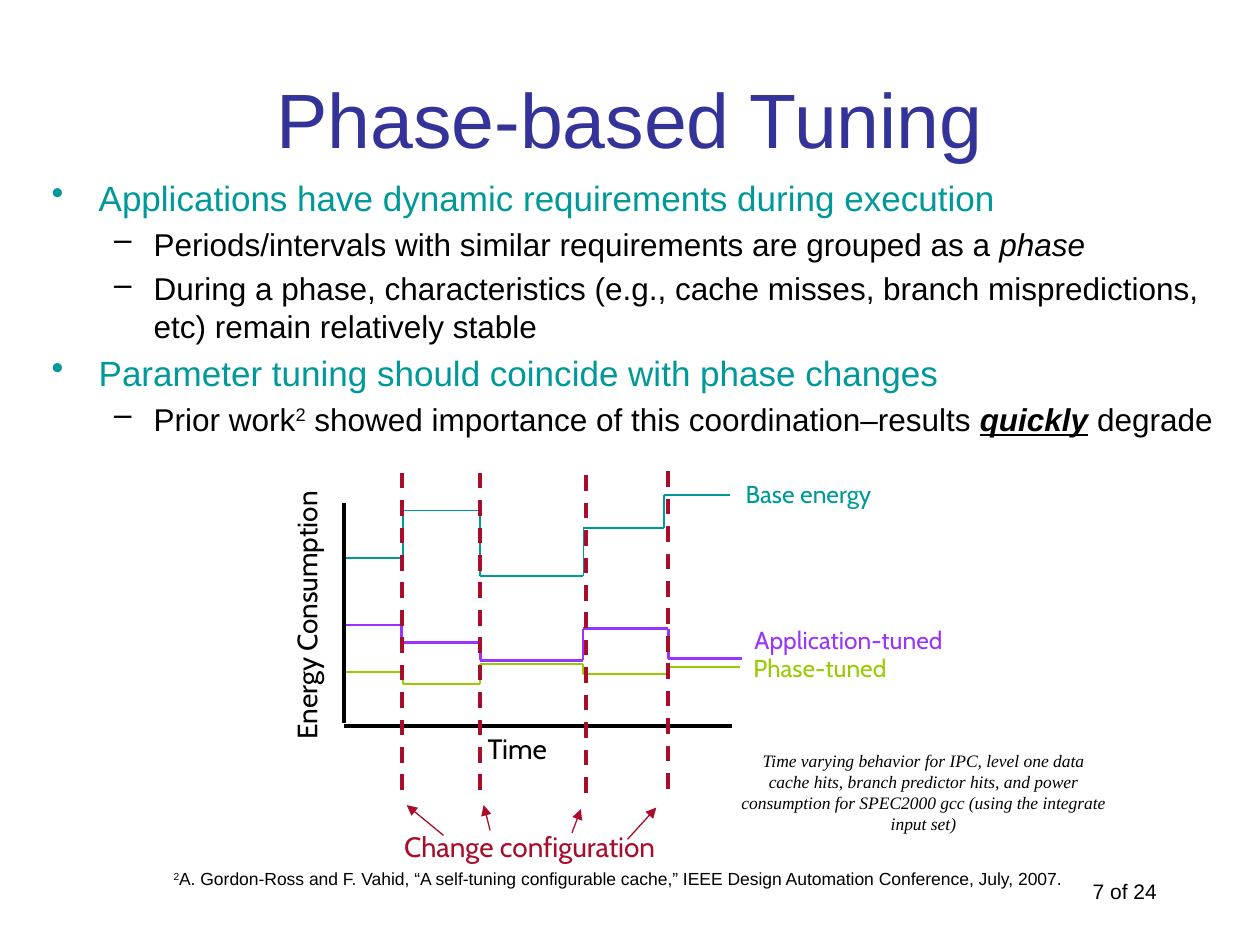
from dataclasses import dataclass
from itertools import pairwise

from lxml import etree
from pptx import Presentation
from pptx import util as u
from pptx.dml import color as dml
from pptx.enum import dml as line_styles, shapes, text
from pptx.oxml import ns


@dataclass(frozen=True)
class Theme:
    title: str = "333399"
    teal: str = "009999"
    purple: str = "9933FF"
    green: str = "99CC00"
    red: str = "A90D2B"
    black: str = "000000"
    sans: str = "Arial"
    serif: str = "Times New Roman"
    chart: str = "Cabin"
    title_size: int = 44
    point_size: int = 20
    detail_size: int = 18
    axis_size: int = 16
    label_size: int = 14
    page_size: int = 12
    note_size: int = 10


@dataclass(frozen=True)
class Box:
    left: float
    top: float
    width: float
    height: float


@dataclass(frozen=True)
class Trace:
    """Energy per phase: one level between each pair of phase edges."""
    label: str
    color: str
    weight: float
    edges: tuple
    levels: tuple
    label_box: Box


@dataclass(frozen=True)
class BulletStyle:
    mark: str
    level: int
    color: str
    size: int
    margin: float
    hang: float


THEME = Theme()
POINT = BulletStyle("•", 0, THEME.teal, THEME.point_size, 0.95, 0.95)
DETAIL = BulletStyle("–", 1, THEME.black, THEME.detail_size, 2.06, 0.8)

# A run is plain text or a (text, format) pair
BULLETS = [
    (POINT, ["Applications have dynamic requirements during execution"]),
    (DETAIL, ["Periods/intervals with similar requirements are grouped as a ",
              ("phase", {"italic": True})]),
    (DETAIL, ["During a phase, characteristics (e.g., cache misses, branch "
              "mispredictions, etc) remain relatively stable"]),
    (POINT, ["Parameter tuning should coincide with phase changes"]),
    (DETAIL, ["Prior work", ("2", {"raised": True}),
              " showed importance of this coordination–results ",
              ("quickly", {"bold": True, "italic": True, "underline": True}),
              " degrade"]),
]

TRACES = [
    Trace("Base energy", THEME.teal, 1,
          (6.96, 8.13, 9.68, 11.76, 13.39, 14.71),
          (11.25, 10.29, 11.61, 10.64, 9.98), Box(14.78, 9.53, 3.23, 0.86)),
    Trace("Application-tuned", THEME.purple, 1.5,
          (6.96, 8.1, 9.68, 11.75, 13.47, 14.96),
          (12.6, 12.95, 13.31, 12.67, 13.28), Box(14.96, 12.47, 4.32, 0.84)),
    Trace("Phase-tuned", THEME.green, 1,
          (6.98, 8.13, 9.68, 11.75, 13.44, 14.91),
          (13.54, 13.79, 13.39, 13.59, 13.44), Box(14.94, 13.03, 3.23, 0.84)),
]

# Tops of the phase-change markers, and arrows from the caption to them
MARKER_TOPS = [(8.1, 9.53), (9.68, 9.53), (11.81, 9.58), (13.46, 9.5)]
MARKER_HEIGHT = 6.47
CHANGE_ARROWS = [((8.94, 16.84), (8.2, 16.23)), ((9.88, 16.74), (9.75, 16.23)),
                 ((11.53, 16.79), (11.71, 16.31)), ((12.65, 16.92), (13.23, 16.28))]


def add_run(paragraph, words: str, *, size: float, color: str = THEME.black,
            font: str = THEME.sans, bold: bool = False, italic: bool = False,
            underline: bool = False, raised: bool = False) -> None:
    run = paragraph.add_run()
    run.text = words
    run.font.size, run.font.name = u.Pt(size), font
    run.font.bold, run.font.italic, run.font.underline = bold, italic, underline
    run.font.color.rgb = dml.RGBColor.from_string(color)
    if raised:
        run._r.get_or_add_rPr().set("baseline", "30000")


def add_runs(paragraph, runs: list, **style) -> None:
    for run in runs:
        words, extra = (run, {}) if isinstance(run, str) else run
        add_run(paragraph, words, **{**style, **extra})


def place(shape, box: Box) -> None:
    shape.left, shape.top = u.Cm(box.left), u.Cm(box.top)
    shape.width, shape.height = u.Cm(box.width), u.Cm(box.height)


def add_box(slide, box: Box, wrap: bool = True):
    shape = slide.shapes.add_textbox(0, 0, 0, 0)
    place(shape, box)
    shape.text_frame.word_wrap = wrap
    return shape


def add_label(slide, box: Box, runs: list, *, centered: bool = False,
              rotation: float = 0, **style) -> None:
    shape = add_box(slide, box, wrap=centered)
    shape.rotation = rotation
    paragraph = shape.text_frame.paragraphs[0]
    if centered:
        paragraph.alignment = text.PP_ALIGN.CENTER
    add_runs(paragraph, runs, **style)


def add_line(slide, start: tuple, end: tuple, color: str, weight: float,
             dashed: bool = False, arrow: bool = False) -> None:
    line = slide.shapes.add_connector(
        shapes.MSO_CONNECTOR.STRAIGHT, *(u.Cm(v) for v in (*start, *end)))
    line.line.color.rgb = dml.RGBColor.from_string(color)
    line.line.width = u.Pt(weight)
    if dashed:
        line.line.dash_style = line_styles.MSO_LINE.DASH
    if arrow:
        etree.SubElement(line.line._get_or_add_ln(), ns.qn("a:tailEnd"), type="triangle")
    etree.SubElement(line._element.spPr, ns.qn("a:effectLst"))


def add_bullets(slide, box: Box, bullets: list) -> None:
    frame = add_box(slide, box).text_frame
    for index, (style, runs) in enumerate(bullets):
        paragraph = frame.add_paragraph() if index else frame.paragraphs[0]
        paragraph.level = style.level
        if index:
            paragraph.space_before = u.Pt(0.2 * style.size)
        properties = paragraph._p.get_or_add_pPr()
        properties.set("marL", str(u.Cm(style.margin)))
        properties.set("indent", str(-u.Cm(style.hang)))
        etree.SubElement(properties, ns.qn("a:buChar"), char=style.mark)
        add_runs(paragraph, runs, size=style.size, color=style.color)


def add_trace(slide, trace: Trace) -> None:
    for (left, right), level in zip(pairwise(trace.edges), trace.levels):
        add_line(slide, (left, level), (right, level), trace.color, trace.weight)
    for edge, (before, after) in zip(trace.edges[1:], pairwise(trace.levels)):
        add_line(slide, (edge, before), (edge, after), trace.color, trace.weight)
    add_label(slide, trace.label_box, [trace.label], size=THEME.label_size,
              color=trace.color, font=THEME.chart)


def add_energy_diagram(slide) -> None:
    axis_text = {"size": THEME.axis_size, "font": THEME.chart}
    for trace in TRACES:
        add_trace(slide, trace)

    # Axes
    add_line(slide, (6.93, 10.13), (6.93, 14.58), THEME.black, 2.25)
    add_line(slide, (6.93, 14.63), (14.76, 14.63), THEME.black, 2.25)
    add_label(slide, Box(9.58, 14.63, 1.75, 0.94), ["Time"], **axis_text)
    add_label(slide, Box(3.35, 11.86, 5.66, 0.94), ["Energy Consumption"],
              rotation=270, **axis_text)

    # Phase changes
    for x, top in MARKER_TOPS:
        add_line(slide, (x, top), (x, top + MARKER_HEIGHT), THEME.red, 2.25, dashed=True)
    add_label(slide, Box(7.9, 16.59, 5.87, 0.94), ["Change configuration"],
              color=THEME.red, **axis_text)
    for start, end in CHANGE_ARROWS:
        add_line(slide, start, end, THEME.red, 0.75, arrow=True)


def main() -> None:
    deck = Presentation()
    deck.slide_width, deck.slide_height = u.Cm(25.4), u.Cm(19.05)
    slide = deck.slides.add_slide(deck.slide_layouts[5])

    # Title and bullets
    title = slide.shapes.title
    place(title, Box(1.9, 0.79, 21.59, 3.18))
    title.text_frame.vertical_anchor = text.MSO_ANCHOR.MIDDLE
    heading = title.text_frame.paragraphs[0]
    heading.alignment = text.PP_ALIGN.CENTER
    add_run(heading, "Phase-based Tuning", size=THEME.title_size, color=THEME.title)
    add_bullets(slide, Box(0.79, 3.43, 24.08, 6.38), BULLETS)

    add_energy_diagram(slide)

    # Side note, citation and page number
    add_label(slide, Box(14.68, 14.99, 7.87, 1.96),
              ["Time varying behavior for IPC, level one data cache hits, branch predictor "
               "hits, and power consumption for SPEC2000 gcc (using the integrate input set)"],
              centered=True, size=THEME.note_size, font=THEME.serif, italic=True)
    add_label(slide, Box(3.02, 17.37, 18.85, 0.69),
              [("2", {"raised": True}),
               "A. Gordon-Ross and F. Vahid, “A self-tuning configurable cache,” "
               "IEEE Design Automation Conference, July, 2007."],
              centered=True, size=THEME.note_size)
    add_label(slide, Box(21.06, 17.58, 3.23, 0.76), ["7 of 24"],
              centered=True, size=THEME.page_size)

    deck.save("out.pptx")


if __name__ == "__main__":
    main()
